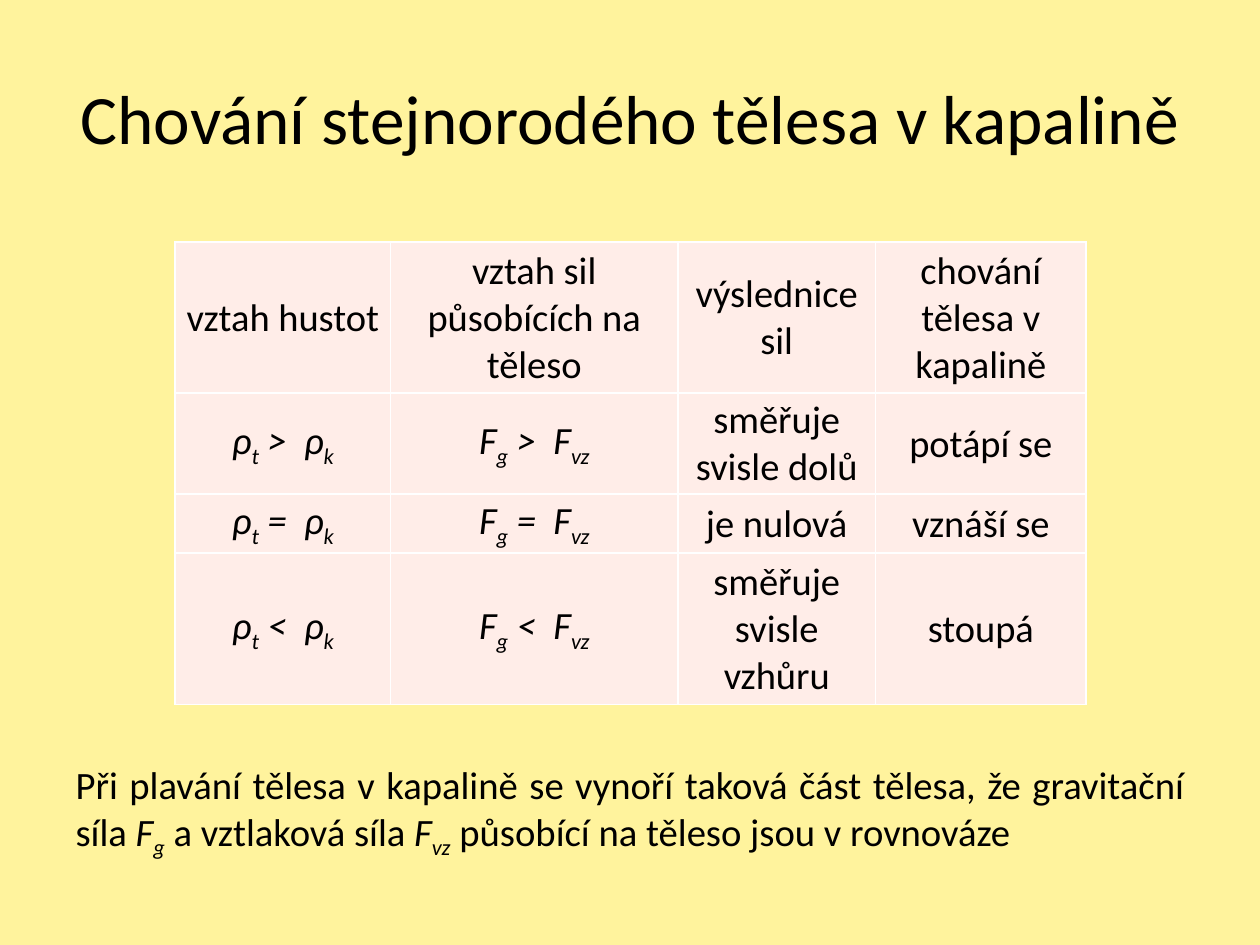
from lxml.etree import SubElement
from pptx import Presentation
from pptx.dml.color import RGBColor as Rgb
from pptx.enum.text import MSO_ANCHOR as Anchor, MSO_AUTO_SIZE as AutoSize, PP_ALIGN as Align
from pptx.oxml import parse_xml
from pptx.oxml.ns import nsdecls, qn
from pptx.util import Inches, Pt

COLOURS = {"page": "FFF39D", "cell": "FFEDE8", "border": "FFFFFF", "text": "000000"}
FONT = "Calibri"
COLUMNS = [1.71, 2.28, 1.57, 1.67]
ROWS = [1.2, 0.8, 0.47, 1.2]
HEADINGS = ["vztah hustot", "vztah sil působících na těleso",
            "výslednice sil", "chování tělesa v kapalině"]
CASES = [(">", "směřuje svisle dolů", "potápí se"),
         ("=", "je nulová", "vznáší se"),
         ("<", "směřuje svisle vzhůru", "stoupá")]


def symbol(letter, index):
    """Spans of an italic quantity with its subscript."""
    return [(letter, "italic"), (index, "sub")]


def relation(letter, left, sign, right):
    return symbol(letter, left) + symbol(f" {sign}  {letter}", right)


def write(para, spans, size, align):
    """Fill a paragraph with (text, style) spans."""
    para.alignment = align
    for text, style in spans:
        span = para.add_run()
        span.text = text
        font = span.font
        font.name, font.size, font.bold = FONT, Pt(size), False
        font.italic = style != "plain"
        font.color.rgb = Rgb.from_string(COLOURS["text"])
        if style == "sub":
            span._r.get_or_add_rPr().set("baseline", "-25000")


def place(box, left, top, width, height):
    box.left, box.top, box.width, box.height = map(Inches, (left, top, width, height))
    box.text_frame.word_wrap = True
    box.text_frame.auto_size = AutoSize.NONE


def add_borders(cell):
    props = cell._tc.get_or_add_tcPr()
    for place_index, side in enumerate("LRTB"):
        props.insert(place_index, parse_xml(
            f'<a:ln{side} w="12700" {nsdecls("a")}><a:solidFill>'
            f'<a:srgbClr val="{COLOURS["border"]}"/></a:solidFill></a:ln{side}>'))


def fill_cell(cell, spans):
    cell.fill.solid()
    cell.fill.fore_color.rgb = Rgb.from_string(COLOURS["cell"])
    cell.vertical_anchor = Anchor.MIDDLE
    cell.margin_left = cell.margin_right = cell.margin_top = Inches(0.01)
    cell.margin_bottom = 0
    write(cell.text_frame.paragraphs[0], spans, 22, Align.CENTER)
    add_borders(cell)


def add_comparison(page):
    content = [[[(heading, "plain")] for heading in HEADINGS]]
    for sign, force, behaviour in CASES:
        content.append([relation("ρ", "t", sign, "k"), relation("F", "g", sign, "vz"),
                        [(force, "plain")], [(behaviour, "plain")]])
    table = page.shapes.add_table(
        len(ROWS), len(COLUMNS), Inches(1.39), Inches(1.92),
        Inches(sum(COLUMNS)), Inches(sum(ROWS))).table
    table.first_row = table.horz_banding = False
    for column, width in zip(table.columns, COLUMNS):
        column.width = Inches(width)
    for row, height, texts in zip(table.rows, ROWS, content):
        row.height = Inches(height)
        for cell, spans in zip(row.cells, texts):
            fill_cell(cell, spans)


def fill_title(box):
    place(box, 0.5, 0.3, 9, 1.25)
    box.text_frame.vertical_anchor = Anchor.MIDDLE
    write(box.text_frame.paragraphs[0],
          [("Chování stejnorodého tělesa v kapalině", "plain")], 39.6, Align.CENTER)


def fill_conclusion(box):
    place(box, 0.5, 5.99, 9, 0.9)
    para = box.text_frame.paragraphs[0]
    para.space_before = Pt(0)
    spans = [("Při plavání tělesa v kapalině se vynoří taková část tělesa, "
              "že gravitační síla ", "plain"), *symbol("F", "g"),
             (" a vztlaková síla ", "plain"), *symbol("F", "vz"),
             (" působící na těleso jsou v rovnováze", "plain")]
    write(para, spans, 22.1, Align.JUSTIFY)
    # No bullet and no hanging indent
    props = para._p.get_or_add_pPr()
    props.set("marL", "0")
    props.set("indent", "0")
    SubElement(props, qn("a:buNone"))


def main():
    deck = Presentation()
    deck.slide_width, deck.slide_height = Inches(10), Inches(7.5)
    page = deck.slides.add_slide(deck.slide_layouts[1])
    page.background.fill.solid()
    page.background.fill.fore_color.rgb = Rgb.from_string(COLOURS["page"])

    fill_title(page.shapes.title)
    fill_conclusion(page.placeholders[1])
    add_comparison(page)
    deck.save("out.pptx")


if __name__ == "__main__":
    main()
